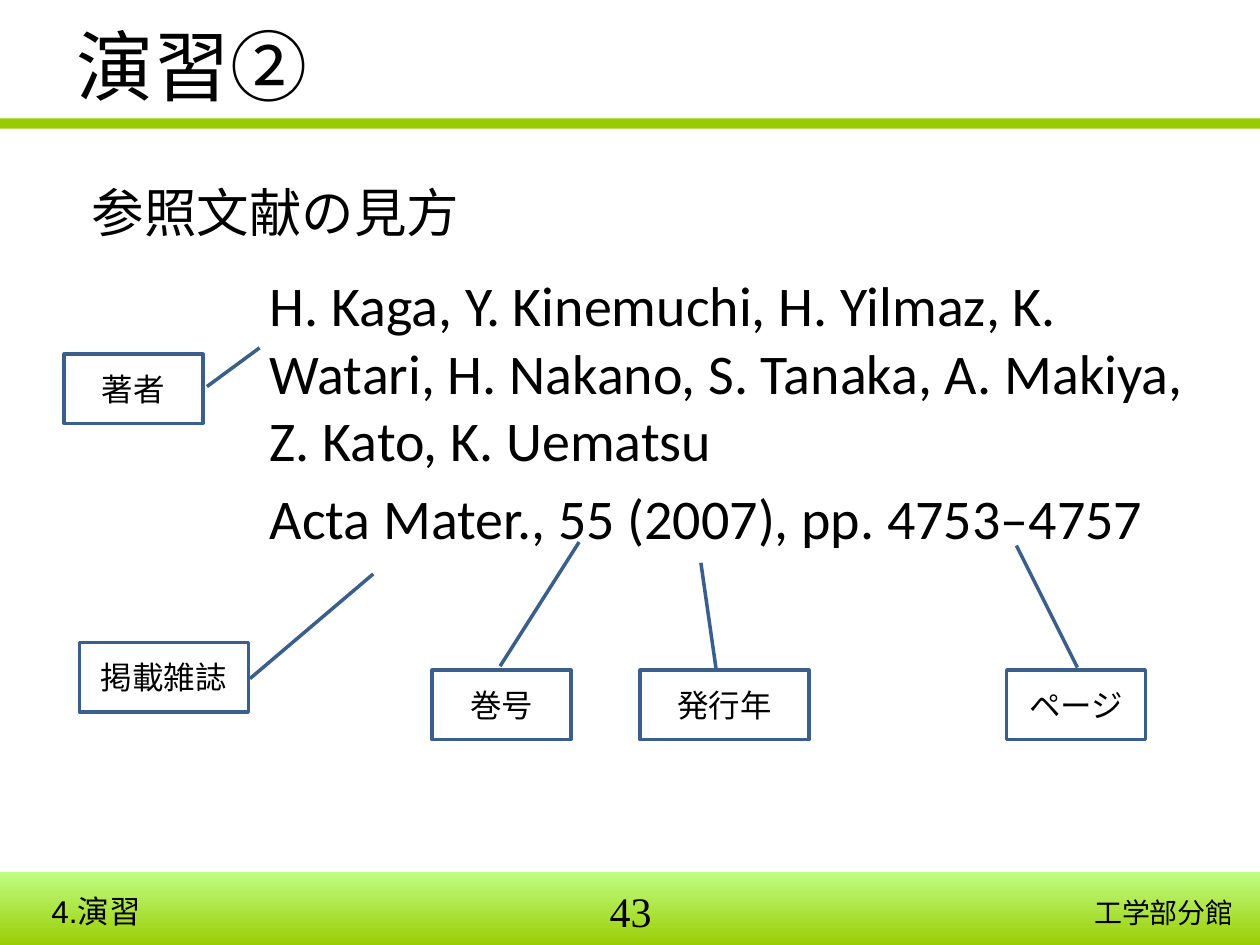
"""Build the exercise slide that explains the parts of a literature reference."""
import dataclasses

import pptx
import pptx.dml.color
import pptx.enum.shapes
import pptx.enum.text
import pptx.oxml
import pptx.util

Pt = pptx.util.Pt
RGB = pptx.dml.color.RGBColor
ALIGN = pptx.enum.text.PP_ALIGN
ANCHOR = pptx.enum.text.MSO_ANCHOR
SHAPE = pptx.enum.shapes.MSO_SHAPE


@dataclasses.dataclass(frozen=True)
class Theme:
    ink: RGB = RGB(0x00, 0x00, 0x00)
    green: RGB = RGB(0x99, 0xCC, 0x00)
    light_green: RGB = RGB(0xC0, 0xFD, 0x83)
    outline: RGB = RGB(0x3A, 0x5F, 0x8C)
    main_font: str = "Calibri"
    footer_font: str = "Arial"
    serif_font: str = "Times New Roman"
    title_size: int = 44
    body_size: int = 32
    heading_size: int = 30
    page_size: int = 24
    label_size: int = 18
    small_size: int = 16


THEME = Theme()
REFERENCE = (
    "H. Kaga, Y. Kinemuchi, H. Yilmaz, K. Watari, H. Nakano, S. Tanaka, "
    "A. Makiya, Z. Kato, K. Uematsu",
    "Acta Mater., 55 (2007), pp. 4753–4757",
)
NARROW, WIDE, LABEL_HEIGHT = 79.2, 96.5, 39.6
LOWER_ROW = 383
CALLOUTS = (
    ("著者", 36.7, 202.3, NARROW, (0.47, 1.03, -0.09, 1.41)),
    ("掲載雑誌", 45.4, 367.2, WIDE, (0.52, 1.01, -0.99, 1.74)),
    ("巻号", 247, LOWER_ROW, NARROW, (-0.06, 0.49, -1.85, 1.06)),
    ("発行年", 365.8, LOWER_ROW, WIDE, (-0.02, 0.45, -1.55, 0.36)),
    ("ページ", 575.3, LOWER_ROW, NARROW, (-0.04, 0.51, -1.8, 0.07)),
)


def style(paragraph, size, font=THEME.main_font, align=ALIGN.LEFT):
    """Set the type and alignment of a paragraph."""
    paragraph.alignment = align
    paragraph.font.size = Pt(size)
    paragraph.font.name = font
    paragraph.font.color.rgb = THEME.ink


def place(placeholder, left, top, width, height, anchor):
    """Move a placeholder and fix its text frame."""
    placeholder.left, placeholder.top = Pt(left), Pt(top)
    placeholder.width, placeholder.height = Pt(width), Pt(height)
    frame = placeholder.text_frame
    frame.word_wrap = True
    frame.auto_size = pptx.enum.text.MSO_AUTO_SIZE.NONE
    frame.vertical_anchor = anchor
    return frame


def fill_title(slide, text):
    """Write the slide title."""
    frame = place(slide.shapes.title, 36.7, -24.5, 704.2, 122.4, ANCHOR.MIDDLE)
    frame.text = text
    style(frame.paragraphs[0], THEME.title_size)


def fill_reference(slide, lines):
    """Write the reference as indented paragraphs without bullets."""
    frame = place(slide.placeholders[1], 110.9, 151.2, 578.9, 472.3, ANCHOR.TOP)
    frame.text = "\n".join(lines)
    for position, paragraph in enumerate(frame.paragraphs):
        paragraph.level = 1
        properties = paragraph._p.get_or_add_pPr()
        properties.set("marL", str(Pt(36)))
        properties.set("indent", "0")
        properties.append(pptx.oxml.parse_xml(
            '<a:buNone xmlns:a="http://schemas.openxmlformats.org/drawingml/2006/main"/>'))
        paragraph.space_before = Pt(0.2 * THEME.body_size if position else 0)
        style(paragraph, THEME.body_size)


def add_band(slide, top, height, gradient=False):
    """Add a green band across the slide."""
    band = slide.shapes.add_shape(SHAPE.RECTANGLE, 0, Pt(top), Pt(720), Pt(height))
    band.shadow.inherit = False
    band.line.fill.background()
    if gradient:
        band.fill.gradient()
        band.fill.gradient_angle = 270
        for stop, colour in zip(band.fill.gradient_stops, (THEME.light_green, THEME.green)):
            stop.color.rgb = colour
    else:
        band.fill.solid()
        band.fill.fore_color.rgb = THEME.green


def add_label(slide, text, left, top, width, height, size, font, align=ALIGN.LEFT):
    """Add one line of free text."""
    label = slide.shapes.add_textbox(Pt(left), Pt(top), Pt(width), Pt(height))
    label.text_frame.word_wrap = True
    label.text_frame.text = text
    style(label.text_frame.paragraphs[0], size, font, align)


def add_callout(slide, text, left, top, width, pointer):
    """Add a framed label whose line points into the reference."""
    callout = slide.shapes.add_shape(
        SHAPE.LINE_CALLOUT_1, Pt(left), Pt(top), Pt(width), Pt(LABEL_HEIGHT))
    for index, value in enumerate(pointer):
        callout.adjustments[index] = value
    callout.shadow.inherit = False
    callout.fill.background()
    callout.line.color.rgb = THEME.outline
    callout.line.width = Pt(2)
    callout.text_frame.vertical_anchor = ANCHOR.MIDDLE
    callout.text_frame.text = text
    style(callout.text_frame.paragraphs[0], THEME.label_size, align=ALIGN.CENTER)


def main():
    """Build and save the slide."""
    deck = pptx.Presentation()
    deck.slide_width, deck.slide_height = Pt(720), Pt(540)
    slide = deck.slides.add_slide(deck.slide_layouts[1])
    add_band(slide, 498.2, 43.2, gradient=True)
    add_band(slide, 67.7, 5.8)
    fill_title(slide, "演習②")
    fill_reference(slide, REFERENCE)
    add_label(slide, "参照文献の見方", 45.4, 99.4, 674.6, 43.9,
              THEME.heading_size, THEME.main_font)
    for callout in CALLOUTS:
        add_callout(slide, *callout)
    add_label(slide, "4.演習", 22.3, 506.2, 286.6, 28.8,
              THEME.label_size, THEME.footer_font)
    add_label(slide, "43", 337.7, 502.6, 45.4, 31.7,
              THEME.page_size, THEME.serif_font, ALIGN.CENTER)
    add_label(slide, "工学部分館", 604.1, 508.3, 108, 23.8,
              THEME.small_size, THEME.serif_font, ALIGN.RIGHT)
    deck.save("out.pptx")


if __name__ == "__main__":
    main()
